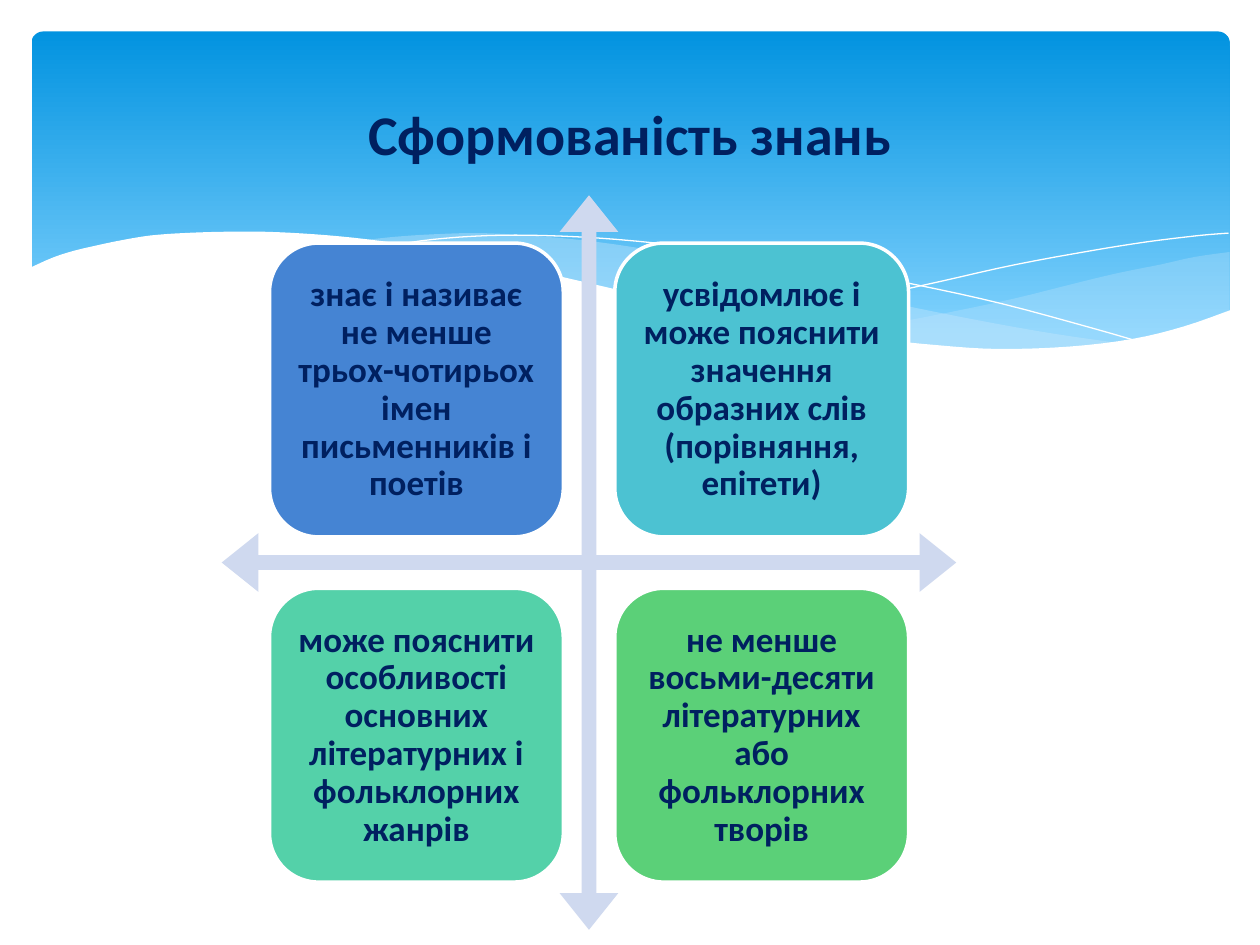
from dataclasses import dataclass
from lxml import etree
from pptx import Presentation
from pptx.dml.color import RGBColor
from pptx.enum.shapes import MSO_SHAPE
from pptx.enum.text import MSO_ANCHOR, PP_ALIGN
from pptx.oxml.ns import qn
from pptx.util import Inches, Pt

ROUND_RECT = MSO_SHAPE.ROUNDED_RECTANGLE
QUAD_ARROW = MSO_SHAPE.QUAD_ARROW
MIDDLE = MSO_ANCHOR.MIDDLE
CENTER = PP_ALIGN.CENTER
COLS, ROWS = 100, 75
CELL = Inches(0.1)


@dataclass(frozen=True)
class Theme:
    font: str = "Calibri"
    title_size: int = 32
    card_size: int = 20
    ink: str = "002060"
    white: str = "FFFFFF"
    sky_top: str = "0293E0"
    sky_bottom: str = "83D3FE"
    swell: str = "C6E7FC"
    arrows: str = "CFD9EF"
    cards: tuple = ("4584D3", "4CC2D2", "54D1A9", "5BD078")


@dataclass(frozen=True)
class Box:
    x: float
    y: float
    w: float
    h: float

    def inner(self, x, y, w, h):
        return Box(self.x + x * self.w, self.y + y * self.h, w * self.w, h * self.h)

    def emu(self):
        return [round(v * CELL) for v in (self.x, self.y, self.w, self.h)]


THEME = Theme()

SWELLS = [
    (29, [
        [(97.6, 2), (94.8, 2.4), (92.1, 3), (89.1, 3.6), (86.1, 4.3),
         (80.5, 5.7), (75.3, 6.8), (70.6, 7.7), (66.1, 8.5)],
        [(66.1, 8.5), (69.1, 8.9), (73.2, 9.4), (78.1, 9.7), (82.4, 9.7),
         (86.3, 9.5), (89.7, 9), (92.8, 8.3), (94.9, 7.7), (97.6, 6.7)],
    ]),
    (40, [
        [(28.6, 1.1), (31.3, 0.8), (34.4, 0.6), (38, 0.5), (42, 0.7),
         (46.5, 1.1), (51.4, 1.8), (56.9, 2.8), (62.9, 4.2), (70.6, 6),
         (77.5, 7.4), (83.7, 8.5), (89.3, 9.3)],
        [(89.3, 9.3), (85.7, 9.7), (81.8, 9.8), (77.3, 9.7), (72.2, 9.4),
         (66.5, 8.6), (60.1, 7.5), (53, 6), (44.9, 4.2), (40.4, 3.1),
         (36.2, 2.3), (32.3, 1.6), (28.6, 1.1)],
    ]),
]
THREADS = [
    [(30.9, 1.5), (34.4, 1), (38.7, 0.7), (43.3, 0.7), (48.9, 1), (55.6, 1.7),
     (63.6, 2.8), (72.7, 4.6), (79.5, 6.1), (86.9, 8.1), (90.7, 9.2)],
    [(61.3, 7.7), (65.3, 6.6), (69.5, 5.5), (74.8, 4.3), (80.6, 3),
     (86.6, 1.9), (91, 1.2), (95.1, 0.7), (97.5, 0.5)],
]
FOAM = [
    [(97.7, 6.6), (94, 7.9), (89.9, 8.9), (85, 9.5), (79.3, 9.7), (74.4, 9.4),
     (68.8, 8.8), (62.6, 7.8), (55.5, 6.5), (50.3, 5.3), (44.7, 4), (39.1, 2.7),
     (34, 1.7), (29.2, 1), (25, 0.6), (21.1, 0.4), (17.7, 0.4), (14.6, 0.5),
     (11.9, 0.7), (9.5, 1.1), (7.6, 1.5), (5.9, 1.9), (4.6, 2.3), (3.6, 2.7),
     (2.3, 3.3)],
    [(2.3, 14.9), (97.7, 14.9)],
]
CARD_TEXTS = [
    "знає і називає не менше трьох-чотирьох імен письменників і поетів",
    "усвідомлює і може пояснити значення образних слів (порівняння, епітети)",
    "може пояснити особливості основних літературних і фольклорних жанрів",
    "не менше восьми-десяти літературних або фольклорних творів",
]


def rgb(color):
    return RGBColor.from_string(color)


def paint(sp, fill=None, line=None, width=0, alpha=None):
    sp.shadow.inherit = False
    if fill:
        sp.fill.solid()
        sp.fill.fore_color.rgb = rgb(fill)
    else:
        sp.fill.background()
    if alpha:
        color = sp.element.spPr.find(qn("a:solidFill"))[0]
        etree.SubElement(color, qn("a:alpha"), val=str(alpha * 1000))
    if line:
        sp.line.color.rgb = rgb(line)
        sp.line.width = Pt(width)
    else:
        sp.line.fill.background()


def write(sp, text, size, inset, spacing):
    tf = sp.text_frame
    tf.word_wrap = True
    tf.vertical_anchor = MIDDLE
    tf.margin_left = tf.margin_right = tf.margin_top = tf.margin_bottom = Inches(inset)
    p = tf.paragraphs[0]
    p.alignment = CENTER
    p.line_spacing = spacing
    r = p.add_run()
    r.text = text
    r.font.name = THEME.font
    r.font.size = Pt(size)
    r.font.bold = True
    r.font.color.rgb = rgb(THEME.ink)


def smooth(points, steps=4):
    padded = [points[0], *points, points[-1]]
    curve = [points[0]]
    for a, b, c, d in zip(padded, padded[1:], padded[2:], padded[3:]):
        for i in range(1, steps + 1):
            t = i / steps
            curve.append(tuple(
                q + t / 2 * (r - p + t * (2 * p - 5 * q + 4 * r - s + t * (3 * (q - r) + s - p)))
                for p, q, r, s in zip(a, b, c, d)))
    return curve


def outline(s, box, edges, close=True):
    points = [((box.x + x) * CELL, (box.y + y) * CELL)
              for edge in edges for x, y in smooth(edge)]
    builder = s.shapes.build_freeform(*points[0])
    builder.add_line_segments(points[1:], close=close)
    return builder.convert_to_shape()


def add_sky(s, box):
    sp = s.shapes.add_shape(ROUND_RECT, *box.emu())
    sp.adjustments[0] = 0.034
    paint(sp)
    sp.fill.gradient()
    sp.fill.gradient_angle = 270
    stops = zip(sp.fill.gradient_stops, (0, 0.9), (THEME.sky_top, THEME.sky_bottom))
    for stop, position, color in stops:
        stop.position = position
        stop.color.rgb = rgb(color)


def add_waves(s, box):
    for alpha, edges in SWELLS:
        paint(outline(s, box, edges), THEME.swell, alpha=alpha)
    for thread in THREADS:
        paint(outline(s, box, [thread], close=False), line=THEME.white)
    paint(outline(s, box, FOAM), THEME.white)


def add_matrix(s, box):
    sp = s.shapes.add_shape(QUAD_ARROW, *box.emu())
    for i, value in enumerate((0.02, 0.04, 0.05)):
        sp.adjustments[i] = value
    paint(sp, THEME.arrows)
    for i, (text, color) in enumerate(zip(CARD_TEXTS, THEME.cards)):
        row, col = divmod(i, 2)
        card = box.inner(0.065 + 0.47 * col, 0.065 + 0.47 * row, 0.4, 0.4)
        sp = s.shapes.add_shape(ROUND_RECT, *card.emu())
        paint(sp, color, THEME.white, 2)
        write(sp, text, THEME.card_size, 0.08, 0.9)


def add_title(s, box):
    sp = s.shapes.add_textbox(*box.emu())
    write(sp, "Сформованість знань", THEME.title_size, 0.1, 1)


def main():
    prs = Presentation()
    prs.slide_width, prs.slide_height = COLS * CELL, ROWS * CELL
    s = prs.slides.add_slide(prs.slide_layouts[6])
    add_sky(s, Box(2.5, 2.5, 95.1, 27))
    add_waves(s, Box(0, 18, COLS, 15))
    add_matrix(s, Box(17.6, 15.5, 58.3, 58.3))
    add_title(s, Box(5, 3.7, 90, 13.7))
    prs.save("out.pptx")


if __name__ == "__main__":
    main()
